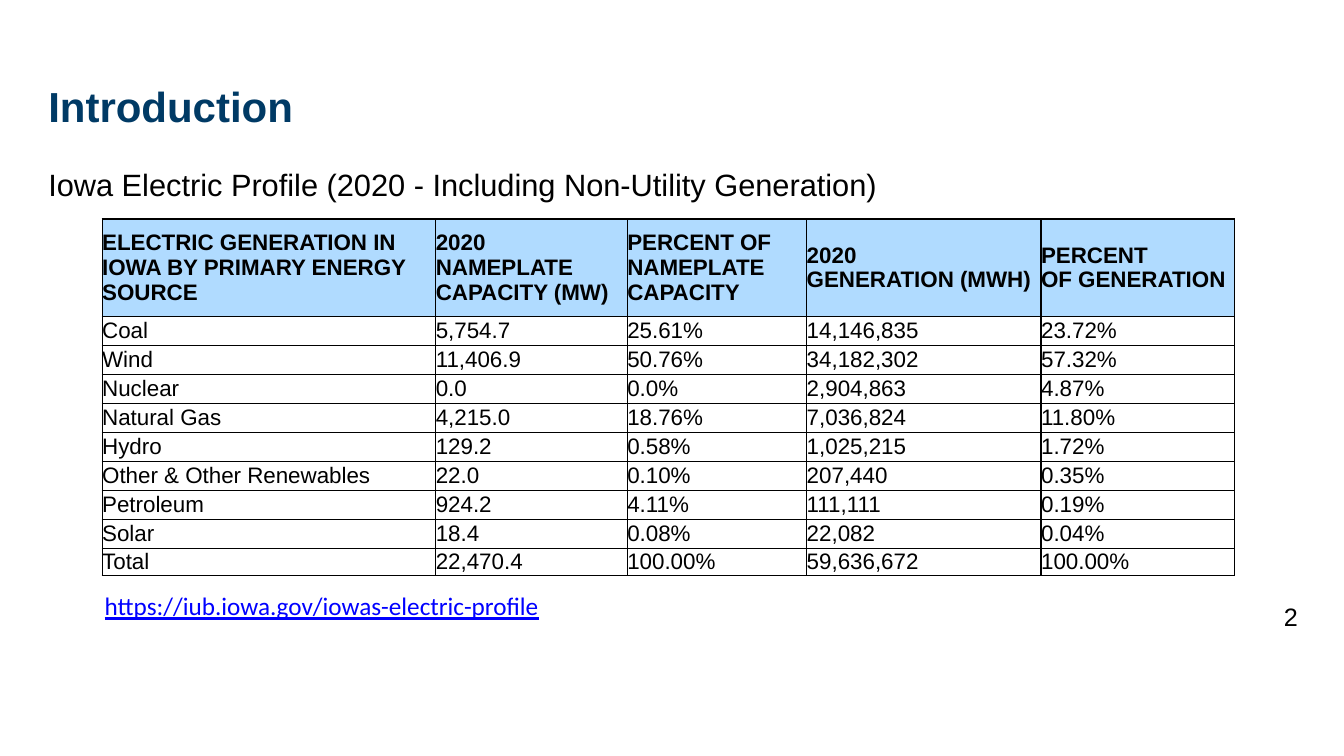
from dataclasses import dataclass
from typing import Optional

from lxml.etree import SubElement
from pptx import Presentation
from pptx.dml.color import RGBColor as Rgb
from pptx.enum.text import MSO_ANCHOR as Anchor
from pptx.oxml.ns import qn
from pptx.util import Pt


@dataclass(frozen=True)
class Theme:
    navy: str = "003A65"
    black: str = "000000"
    link: str = "0000FF"
    header_fill: str = "B0DBFF"
    sans: str = "Arial"
    link_font: str = "Calibri"
    title_size: int = 30
    subtitle_size: int = 22
    small_size: int = 18
    table_size: int = 16
    border: int = 1


THEME = Theme()


@dataclass(frozen=True)
class Style:
    size: int
    color: str = THEME.black
    font: str = THEME.sans
    bold: bool = False
    underline: bool = False


@dataclass(frozen=True)
class Label:
    text: str
    left: float
    top: float
    width: float
    height: float
    style: Style
    anchor: Anchor = Anchor.TOP


@dataclass(frozen=True)
class EnergySource:
    name: str
    capacity: str
    capacity_share: str
    generation: str
    generation_share: str

    def values(self) -> list[str]:
        return [self.name, self.capacity, self.capacity_share,
                self.generation, self.generation_share]


LABELS = [
    Label("Introduction", 27.4, 15.8, 699, 81.4,
          Style(THEME.title_size, THEME.navy, bold=True), Anchor.BOTTOM),
    Label("Iowa Electric Profile (2020 - Including Non-Utility Generation)",
          27.4, 114.5, 818, 368.6, Style(THEME.subtitle_size)),
    Label("https://iub.iowa.gov/iowas-electric-profile", 67.7, 418.3, 409.7, 28.8,
          Style(THEME.small_size, THEME.link, THEME.link_font, underline=True)),
    Label("2", 910, 426.2, 46, 28.8, Style(THEME.small_size)),
]

HEADERS = [
    "ELECTRIC GENERATION IN IOWA BY PRIMARY ENERGY SOURCE",
    "2020 NAMEPLATE\nCAPACITY (MW)",
    "PERCENT OF NAMEPLATE\nCAPACITY",
    "2020\nGENERATION (MWH)",
    "PERCENT\nOF GENERATION",
]
SOURCES = [
    EnergySource("Coal", "5,754.7", "25.61%", "14,146,835", "23.72%"),
    EnergySource("Wind", "11,406.9", "50.76%", "34,182,302", "57.32%"),
    EnergySource("Nuclear", "0.0", "0.0%", "2,904,863", "4.87%"),
    EnergySource("Natural Gas", "4,215.0", "18.76%", "7,036,824", "11.80%"),
    EnergySource("Hydro", "129.2", "0.58%", "1,025,215", "1.72%"),
    EnergySource("Other & Other Renewables", "22.0", "0.10%", "207,440", "0.35%"),
    EnergySource("Petroleum", "924.2", "4.11%", "111,111", "0.19%"),
    EnergySource("Solar", "18.4", "0.08%", "22,082", "0.04%"),
    EnergySource("Total", "22,470.4", "100.00%", "59,636,672", "100.00%"),
]
TABLE_LEFT, TABLE_TOP = 73, 156.4
COLUMN_WIDTHS = [238.3, 136.8, 128.2, 167.4, 138]
HEADER_HEIGHT, SOURCE_HEIGHT, TOTAL_HEIGHT = 69.8, 20.7, 18


def write(frame, text: str, style: Style) -> None:
    paragraph = frame.paragraphs[0]
    for index, line in enumerate(text.split("\n")):
        if index:
            paragraph.add_line_break()
        run = paragraph.add_run()
        run.text = line
        font = run.font
        font.name, font.size = style.font, Pt(style.size)
        font.bold, font.underline = style.bold, style.underline
        font.color.rgb = Rgb.from_string(style.color)


def add_label(slide, label: Label) -> None:
    frame = slide.shapes.add_textbox(
        Pt(label.left), Pt(label.top), Pt(label.width), Pt(label.height)).text_frame
    frame.word_wrap = True
    frame.vertical_anchor = label.anchor
    write(frame, label.text, label.style)


def add_borders(cell) -> None:
    properties = cell._tc.get_or_add_tcPr()
    for side in ("a:lnL", "a:lnR", "a:lnT", "a:lnB"):
        line = SubElement(properties, qn(side), w=str(Pt(THEME.border)))
        SubElement(SubElement(line, qn("a:solidFill")), qn("a:srgbClr"), val=THEME.black)


def fill_cell(cell, text: str, style: Style, fill: Optional[str]) -> None:
    cell.margin_left = cell.margin_right = cell.margin_top = cell.margin_bottom = 0
    cell.vertical_anchor = Anchor.MIDDLE
    add_borders(cell)
    if fill:
        cell.fill.solid()
        cell.fill.fore_color.rgb = Rgb.from_string(fill)
    else:
        cell.fill.background()
    write(cell.text_frame, text, style)


def add_profile_table(slide) -> None:
    rows = [HEADERS] + [source.values() for source in SOURCES]
    heights = [HEADER_HEIGHT] + [SOURCE_HEIGHT] * (len(SOURCES) - 1) + [TOTAL_HEIGHT]
    profile = slide.shapes.add_table(
        len(rows), len(HEADERS), Pt(TABLE_LEFT), Pt(TABLE_TOP),
        Pt(sum(COLUMN_WIDTHS)), Pt(sum(heights))).table
    profile.first_row = profile.horz_banding = False
    for column, width in zip(profile.columns, COLUMN_WIDTHS):
        column.width = Pt(width)
    for index, (row, height, texts) in enumerate(zip(profile.rows, heights, rows)):
        row.height = Pt(height)
        is_header = index == 0
        style = Style(THEME.table_size, bold=is_header)
        for cell, text in zip(row.cells, texts):
            fill_cell(cell, text, style, THEME.header_fill if is_header else None)


def main() -> None:
    deck = Presentation()
    deck.slide_width, deck.slide_height = Pt(960), Pt(540)
    slide = deck.slides.add_slide(deck.slide_layouts[6])

    # Title and subtitle
    for label in LABELS[:2]:
        add_label(slide, label)

    # Generation by energy source
    add_profile_table(slide)

    # Web address and page number
    for label in LABELS[2:]:
        add_label(slide, label)

    deck.save("out.pptx")


if __name__ == "__main__":
    main()
